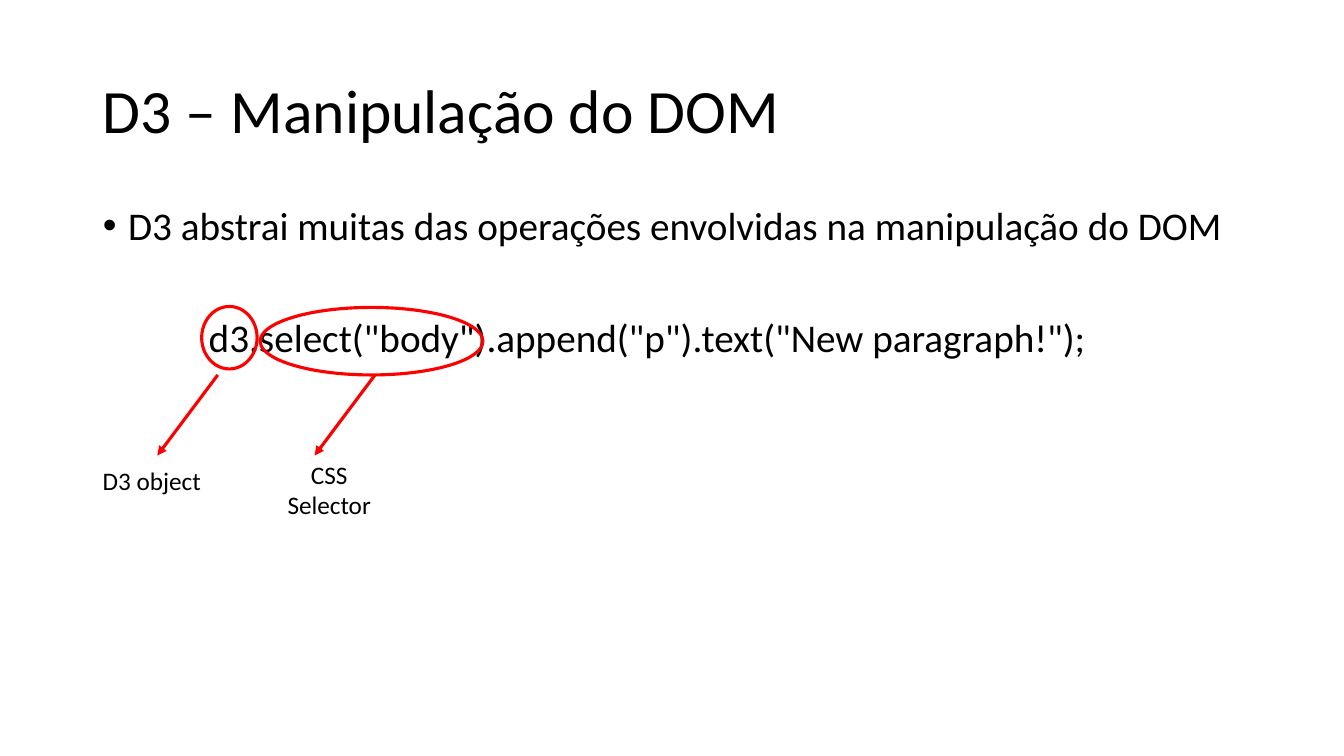
from lxml import etree
from pptx import Presentation
from pptx.dml.color import RGBColor
from pptx.enum import shapes, text
from pptx.oxml.ns import qn
from pptx.util import Inches, Pt

TITLE = "D3 – Manipulação do DOM"
INTRO = "D3 abstrai muitas das operações envolvidas na manipulação do DOM"
CODE = 'd3.select("body").append("p").text("New paragraph!");'
FONT, BLACK, RED = "Calibri", "000000", "FF0000"
LEFT, ALIGN = 0.92, text.PP_ALIGN

# ellipse box, arrow start, label text, label box, label alignment
CALLOUTS = [
    ((2, 3.04, 0.55, 0.62), (2.16, 3.72),
     "D3 object", (LEFT, 4.57, 1.19, 0.4), ALIGN.LEFT),
    ((2.58, 3.05, 2.21, 0.67), (3.72, 3.72),
     "CSS Selector", (2.67, 4.51, 1.19, 0.71), ALIGN.CENTER),
]
ARROW_RUN = (-0.6, 0.8)


def color(value):
    return RGBColor.from_string(value)


def inches(values):
    return [Inches(v) for v in values]


def place(shape, box):
    shape.left, shape.top, shape.width, shape.height = inches(box)


def style(paragraph, size, align=ALIGN.LEFT):
    paragraph.alignment = align
    paragraph.font.name = FONT
    paragraph.font.size = Pt(size)
    paragraph.font.color.rgb = color(BLACK)


def indent(paragraph, margin, first_line):
    props = paragraph._p.get_or_add_pPr()
    props.set("marL", str(Inches(margin)))
    props.set("indent", str(Inches(first_line)))
    return props


def red_line(shape):
    shape.line.color.rgb = color(RED)
    shape.line.width = Pt(2.25)


def add_callout(slide, ellipse_box, start, label, label_box, align):
    """Group an ellipse, the arrow leaving it and the label it points to."""
    parts = slide.shapes.add_group_shape().shapes
    ellipse = parts.add_shape(shapes.MSO_SHAPE.OVAL, *inches(ellipse_box))
    ellipse.shadow.inherit = False
    ellipse.fill.background()
    red_line(ellipse)

    end = [s + d for s, d in zip(start, ARROW_RUN)]
    arrow = parts.add_connector(
        shapes.MSO_CONNECTOR.STRAIGHT, *inches([*start, *end]))
    red_line(arrow)
    etree.SubElement(arrow.line._get_or_add_ln(), qn("a:tailEnd"), type="triangle")
    etree.SubElement(arrow._element.spPr, qn("a:effectLst"))

    frame = parts.add_textbox(*inches(label_box)).text_frame
    frame.word_wrap = True
    frame.auto_size = text.MSO_AUTO_SIZE.SHAPE_TO_FIT_TEXT
    frame.text = label
    style(frame.paragraphs[0], 18, align)


def main():
    deck = Presentation()
    deck.slide_width, deck.slide_height = inches((13.33, 7.5))
    slide = deck.slides.add_slide(deck.slide_layouts[1])
    title, body = slide.placeholders

    place(title, (LEFT, 0.4, 11.5, 1.45))
    title.text_frame.text = TITLE
    title.text_frame.vertical_anchor = text.MSO_ANCHOR.MIDDLE
    heading = title.text_frame.paragraphs[0]
    style(heading, 44)
    heading.line_spacing = 0.9

    place(body, (LEFT, 2, 11.5, 4.76))
    body.text_frame.text = f"{INTRO}\n{CODE}"
    intro, code = body.text_frame.paragraphs
    for paragraph, space in ((intro, 10), (code, 50)):
        style(paragraph, 28)
        paragraph.line_spacing = 0.9
        paragraph.space_before = Pt(space)
    indent(intro, 0.25, -0.25)
    etree.SubElement(indent(code, 1.05, 0), qn("a:buNone"))
    for holder in (title, body):
        holder.text_frame.auto_size = text.MSO_AUTO_SIZE.NONE

    for callout in CALLOUTS:
        add_callout(slide, *callout)
    deck.save("out.pptx")


if __name__ == "__main__":
    main()
